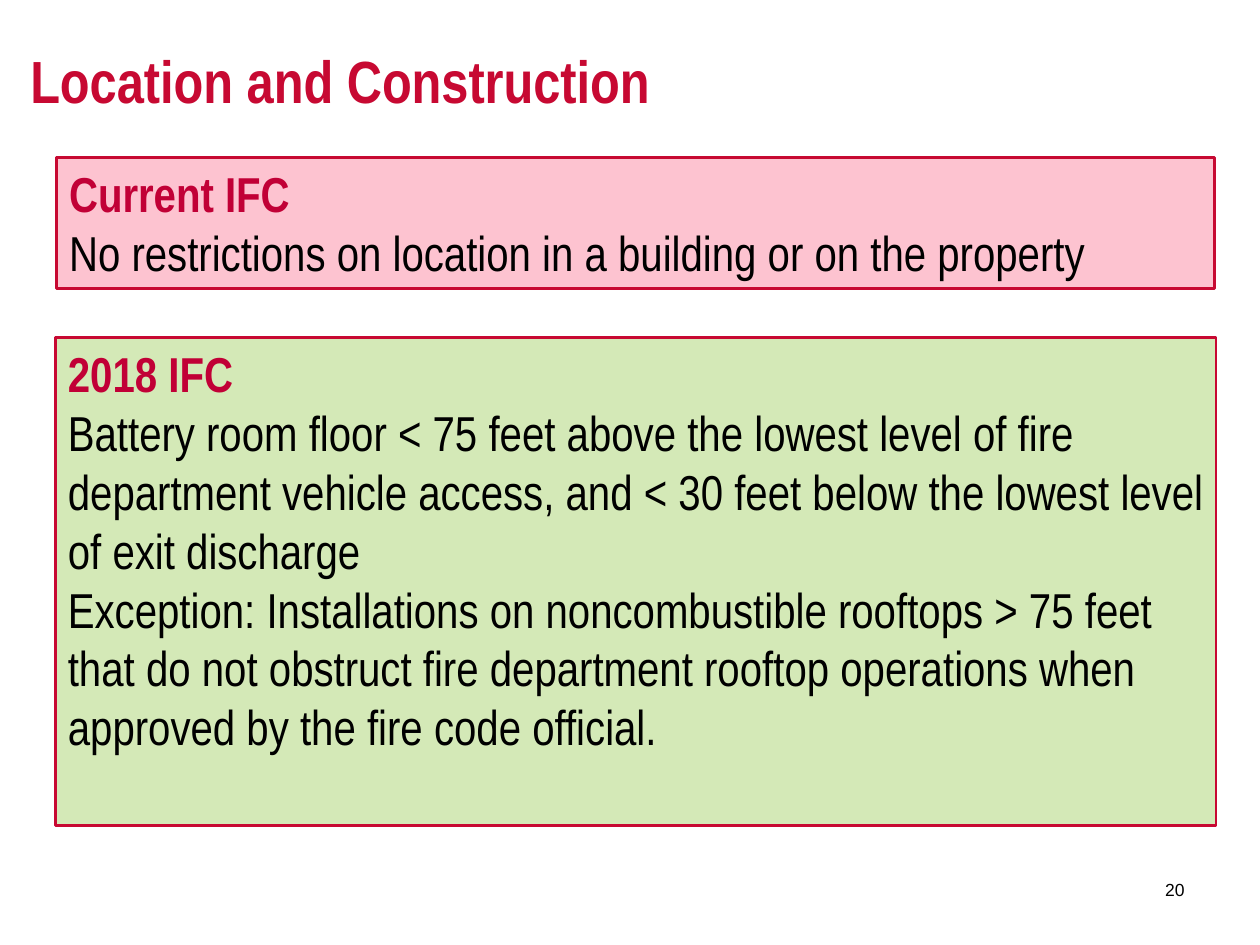
from pptx import Presentation
from pptx.dml.color import RGBColor
from pptx.enum.shapes import MSO_SHAPE as Shape
from pptx.enum.text import MSO_ANCHOR as Anchor, MSO_AUTO_SIZE as AutoSize, PP_ALIGN as Align
from pptx.util import Inches, Pt

RED, HEADING_RED, BLACK = "C70932", "C10036", "000000"
PINK, GREEN = "FDC3D0", "D4E9B7"
NARROW = "Arial Narrow"


def color(hex_value):
    return RGBColor.from_string(hex_value)


def style(paragraph, size, hex_value, bold=False, font=NARROW, align=Align.LEFT):
    paragraph.alignment = align
    for run in paragraph.runs:
        run.font.name = font
        run.font.size = Pt(size)
        run.font.bold = bold
        run.font.color.rgb = color(hex_value)


def place_title(slide, text, box):
    title = slide.shapes.title
    title.left, title.top, title.width, title.height = map(Inches, box)
    frame = title.text_frame
    frame.text = text
    frame.auto_size = AutoSize.NONE
    frame.vertical_anchor = Anchor.TOP
    style(frame.paragraphs[0], 34, RED, bold=True)


def add_code_panel(slide, edition, rules, fill, box):
    """Filled panel with the code edition as heading and its rules below."""
    panel = slide.shapes.add_shape(Shape.RECTANGLE, *map(Inches, box))
    panel.shadow.inherit = False
    panel.fill.solid()
    panel.fill.fore_color.rgb = color(fill)
    panel.line.color.rgb = color(RED)
    panel.line.width = Pt(1.5)

    frame = panel.text_frame
    frame.word_wrap = True
    frame.vertical_anchor = Anchor.TOP
    frame.text = "\n".join([edition, *rules])
    heading, *body = frame.paragraphs
    style(heading, 28, HEADING_RED, bold=True)
    for rule in body:
        style(rule, 28, BLACK)


def add_page_number(slide, number, box):
    frame = slide.shapes.add_textbox(*map(Inches, box)).text_frame
    frame.word_wrap = True
    frame.vertical_anchor = Anchor.MIDDLE
    frame.text = number
    style(frame.paragraphs[0], 10, BLACK, font="Arial", align=Align.RIGHT)


def main():
    deck = Presentation()
    deck.slide_width, deck.slide_height = Inches(10), Inches(7.5)
    slide = deck.slides.add_slide(deck.slide_layouts[5])  # title only

    place_title(slide, "Location and Construction", (0.14, 0.3, 9.65, 1.25))
    add_page_number(slide, "20", (8.8, 6.86, 0.7, 0.4))

    # New requirements, then the current ones above them
    add_code_panel(slide, "2018 IFC", [
        "Battery room floor < 75 feet above the lowest level of fire department "
        "vehicle access, and < 30 feet below the lowest level of exit discharge",
        "Exception: Installations on noncombustible rooftops > 75 feet that do not "
        "obstruct fire department rooftop operations when approved by the fire "
        "code official.",
    ], GREEN, (0.44, 2.68, 9.21, 3.87))
    add_code_panel(slide, "Current IFC", [
        "No restrictions on location in a building or on the property",
    ], PINK, (0.45, 1.25, 9.19, 1.04))

    deck.save("out.pptx")


if __name__ == "__main__":
    main()
